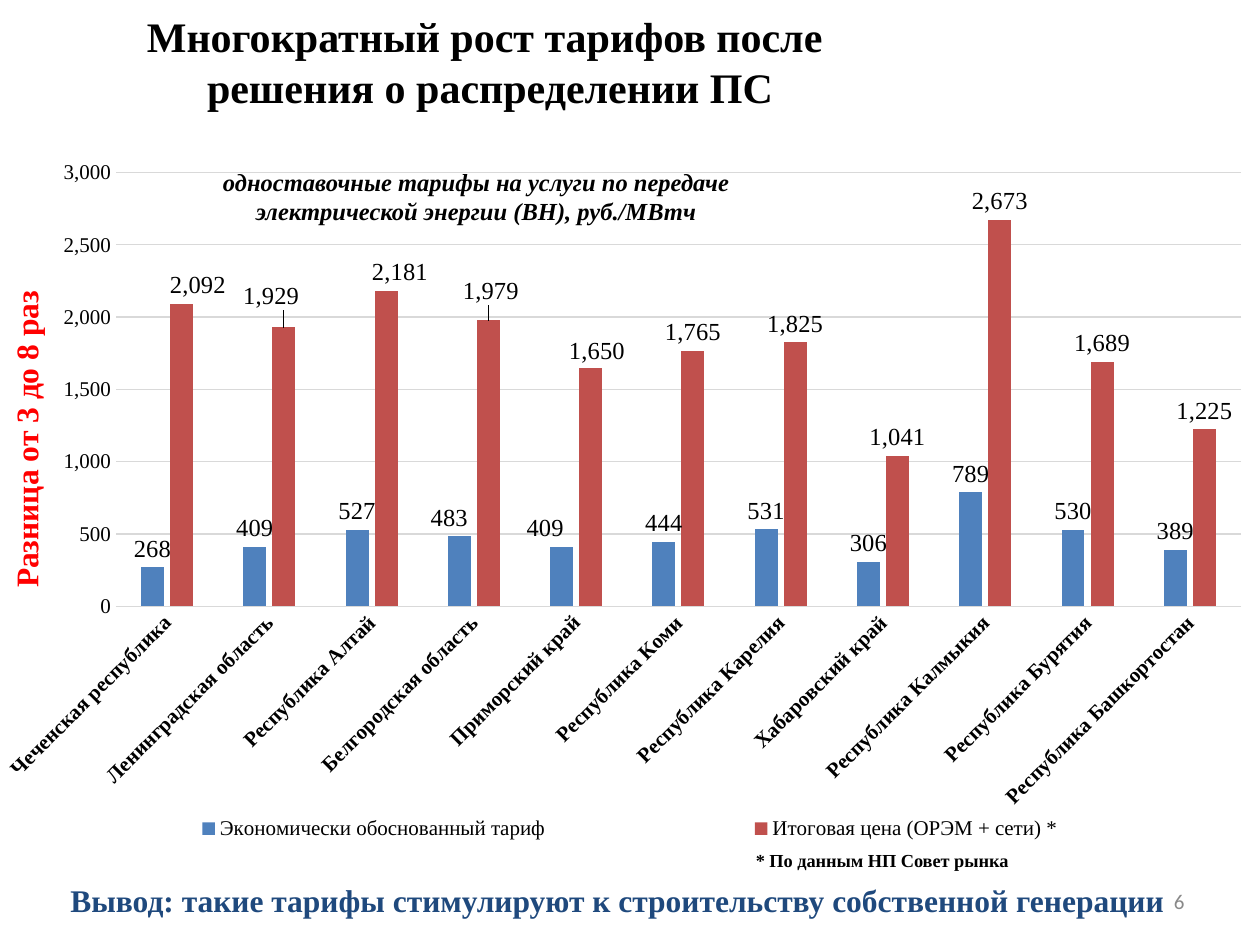
from lxml.etree import SubElement
from pptx import Presentation
from pptx.chart.data import CategoryChartData
from pptx.dml.color import RGBColor
from pptx.enum.chart import XL_CHART_TYPE, XL_LABEL_POSITION, XL_LEGEND_POSITION, XL_TICK_MARK
from pptx.enum.text import MSO_ANCHOR, PP_ALIGN
from pptx.oxml.ns import qn
from pptx.util import Inches, Pt

C = {"text": "000000", "accent": "1F497D", "alert": "FF0000", "muted": "898989",
     "grid": "D9D9D9", "base": "4F81BD", "final": "C0504D"}
SERIF = "Times New Roman"

prs = Presentation()
prs.slide_width, prs.slide_height = Inches(10), Inches(7.5)
W, H = prs.slide_width, prs.slide_height
s = prs.slides.add_slide(prs.slide_layouts[6])


def add_text(text, x, y, w, h, size, color="text", font=SERIF, bold=True, italic=False,
             align=PP_ALIGN.LEFT, anchor=MSO_ANCHOR.TOP, rotation=0):
    """Add a text box; x, y, w and h are percentages of the slide's size."""
    sp = s.shapes.add_textbox(int(W * x / 100), int(H * y / 100),
                              int(W * w / 100), int(H * h / 100))
    sp.rotation = rotation
    tf = sp.text_frame
    tf.word_wrap = True
    tf.vertical_anchor = anchor
    p = tf.paragraphs[0]
    p.text = text
    p.alignment = align
    for r in p.runs:
        f = r.font
        f.name, f.size, f.bold, f.italic = font, Pt(size), bold, italic
        f.color.rgb = RGBColor.from_string(C[color])


def add_layout(parent, position, **values):
    """Insert a manual chart layout at the given child position."""
    layout = SubElement(parent, qn("c:layout"))
    parent.insert(position, layout)
    manual = SubElement(layout, qn("c:manualLayout"))
    for tag, value in values.items():
        SubElement(manual, qn("c:" + tag)).set("val", str(value))


add_text("Многократный рост тарифов после \vрешения о распределении ПС",
         2.6, 1.87, 72.6, 9.2, 24, align=PP_ALIGN.CENTER, anchor=MSO_ANCHOR.MIDDLE)

# Tariff chart
tariffs = [
    ("Чеченская республика", 268, 2092),
    ("Ленинградская область", 409, 1929),
    ("Республика Алтай", 527, 2181),
    ("Белгородская область", 483, 1979),
    ("Приморский край", 409, 1650),
    ("Республика Коми", 444, 1765),
    ("Республика Карелия", 531, 1825),
    ("Хабаровский край", 306, 1041),
    ("Республика Калмыкия", 789, 2673),
    ("Республика Бурятия", 530, 1689),
    ("Республика Башкортостан", 389, 1225),
]
regions, base, final = zip(*tariffs)
data = CategoryChartData(number_format="#,##0")
data.categories = regions
data.add_series("Экономически обоснованный тариф", base)
data.add_series("Итоговая цена (ОРЭМ + сети) *", final)
chart = s.shapes.add_chart(XL_CHART_TYPE.COLUMN_CLUSTERED, 0, int(H * 0.1613),
                           W, int(H * 0.7613), data).chart
chart.has_title = False
chart.font.name, chart.font.size = SERIF, Pt(12)
chart.font.color.rgb = RGBColor.from_string(C["text"])
area = chart.plots[0]
area.gap_width, area.overlap, area.vary_by_categories = 219, -27, False
plot_area = chart._chartSpace.chart.plotArea
for old in plot_area.findall(qn("c:layout")):
    plot_area.remove(old)
add_layout(plot_area, 0, layoutTarget="inner", xMode="edge", yMode="edge",
           x=0.092, y=0.028, w=0.893, h=0.603)

cat, val = chart.category_axis, chart.value_axis
for axis in (cat, val):
    axis.major_tick_mark = axis.minor_tick_mark = XL_TICK_MARK.NONE
    axis.tick_labels.font.size = Pt(12)
    axis.tick_labels.font.name = SERIF
cat.tick_labels.font.bold = True
cat._element.find(qn("c:txPr")).find(qn("a:bodyPr")).set("rot", "-2700000")
val.minimum_scale, val.maximum_scale, val.major_unit = 0, 3000, 500
val.tick_labels.number_format = "#,##0"
val.tick_labels.number_format_is_linked = False
val.format.line.fill.background()
for line in (cat.format.line, val.major_gridlines.format.line):
    line.color.rgb = RGBColor.from_string(C["grid"])
    line.width = Pt(0.75)

chart.has_legend = True
legend = chart.legend
legend.position = XL_LEGEND_POSITION.BOTTOM
legend.include_in_layout = False
legend.font.size, legend.font.name = Pt(12), SERIF
for old in legend._element.findall(qn("c:layout")):
    legend._element.remove(old)
add_layout(legend._element, 1, xMode="edge", yMode="edge", x=0, y=0.91, w=1, h=0.06)

# Labels moved off their default place: point -> shift as shares of the chart
label_shifts = [
    {3: (-0.008, 0), 4: (-0.013, 0)},
    {0: (0.013, 0), 1: (-0.01, -0.017), 2: (0.011, 0), 3: (0.002, -0.014), 4: (0.005, 0.003)},
]
for series, color, shifts in zip(area.series, ("base", "final"), label_shifts):
    series.format.fill.solid()
    series.format.fill.fore_color.rgb = RGBColor.from_string(C[color])
    series.invert_if_negative = False
    labels = series.data_labels
    labels.show_value = True
    labels.number_format, labels.number_format_is_linked = "#,##0", False
    for label in [labels] + [series.points[i].data_label for i in shifts]:
        label.position = XL_LABEL_POSITION.OUTSIDE_END
        label.font.size, label.font.name = Pt(14), SERIF
        label.font.color.rgb = RGBColor.from_string(C["text"])
    for dlbl, (dx, dy) in zip(series._element.xpath("c:dLbls/c:dLbl"), shifts.values()):
        add_layout(dlbl, 1, x=dx, y=dy)

# Captions around the chart
add_text("одноставочные тарифы на услуги по передаче электрической энергии (ВН), руб./МВтч",
         16.6, 16.13, 42.4, 9.2, 14, italic=True,
         align=PP_ALIGN.CENTER, anchor=MSO_ANCHOR.MIDDLE)
add_text("Вывод: такие тарифы стимулируют к строительству собственной генерации",
         4.6, 92.53, 90.8, 5.33, 18, color="accent")
add_text("Разница от 3 до 8 раз", -12.3, 41.73, 28.7, 5.33, 18, color="alert", rotation=270)
add_text("6", 71.7, 92.67, 23.3, 5.33, 12, color="muted", font="Calibri", bold=False,
         align=PP_ALIGN.RIGHT, anchor=MSO_ANCHOR.MIDDLE)
add_text("* По данным НП Совет рынка", 59, 89.2, 28, 3.73, 10.5)

prs.save("out.pptx")
